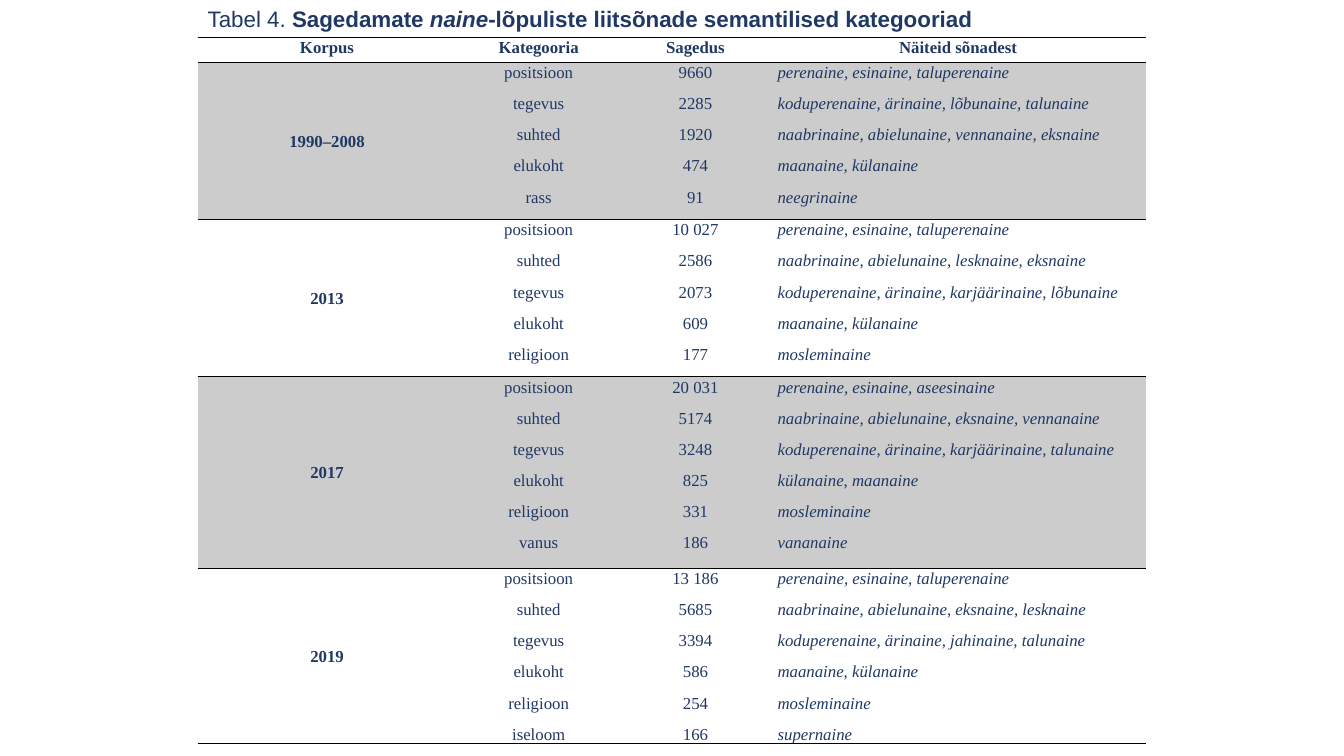
from lxml import etree
from pptx import Presentation
from pptx.dml.color import RGBColor
from pptx.enum.text import MSO_ANCHOR, MSO_AUTO_SIZE, PP_ALIGN
from pptx.oxml.ns import qn
from pptx.util import Pt

TOP, MIDDLE = MSO_ANCHOR.TOP, MSO_ANCHOR.MIDDLE
LEFT, CENTER = PP_ALIGN.LEFT, PP_ALIGN.CENTER
NO_AUTOFIT = MSO_AUTO_SIZE.NONE

NAVY = RGBColor(0x20, 0x38, 0x64)
BLACK = RGBColor(0, 0, 0)
GREY = RGBColor(0xCC, 0xCC, 0xCC)
PLAIN_TABLE_STYLE = "{2D5ABB26-0587-4C30-8999-92F81FD0307C}"

TITLE_SPANS = [
    ("Tabel 4. ", False, False),
    ("Sagedamate ", True, False),
    ("naine", True, True),
    ("-lõpuliste liitsõnade semantilised kategooriad", True, False),
]
HEADINGS = ["Korpus", "Kategooria", "Sagedus", "Näiteid sõnadest"]
COLUMN_WIDTHS = [185, 117.4, 106.6, 268.6]
HEADER_HEIGHT = 18
CORPORA = [
    ("1990–2008", 112.3, [
        ("positsioon", "9660", "perenaine, esinaine, taluperenaine"),
        ("tegevus", "2285", "koduperenaine, ärinaine, lõbunaine, talunaine"),
        ("suhted", "1920", "naabrinaine, abielunaine, vennanaine, eksnaine"),
        ("elukoht", "474", "maanaine, külanaine"),
        ("rass", "91", "neegrinaine"),
    ]),
    ("2013", 112.3, [
        ("positsioon", "10 027", "perenaine, esinaine, taluperenaine"),
        ("suhted", "2586", "naabrinaine, abielunaine, lesknaine, eksnaine"),
        ("tegevus", "2073", "koduperenaine, ärinaine, karjäärinaine, lõbunaine"),
        ("elukoht", "609", "maanaine, külanaine"),
        ("religioon", "177", "mosleminaine"),
    ]),
    ("2017", 136.8, [
        ("positsioon", "20 031", "perenaine, esinaine, aseesinaine"),
        ("suhted", "5174", "naabrinaine, abielunaine, eksnaine, vennanaine"),
        ("tegevus", "3248", "koduperenaine, ärinaine, karjäärinaine, talunaine"),
        ("elukoht", "825", "külanaine, maanaine"),
        ("religioon", "331", "mosleminaine"),
        ("vanus", "186", "vananaine"),
    ]),
    ("2019", 124.6, [
        ("positsioon", "13 186", "perenaine, esinaine, taluperenaine"),
        ("suhted", "5685", "naabrinaine, abielunaine, eksnaine, lesknaine"),
        ("tegevus", "3394", "koduperenaine, ärinaine, jahinaine, talunaine"),
        ("elukoht", "586", "maanaine, külanaine"),
        ("religioon", "254", "mosleminaine"),
        ("iseloom", "166", "supernaine"),
    ]),
]


class TablePage:
    title_font, title_size = "Arial", 16
    table_font, table_size = "Times New Roman", 12
    color = NAVY

    def __init__(self, deck):
        self.slide = deck.slides.add_slide(deck.slide_layouts[5])

    def title(self, spans, left, top, width, height):
        box = self.slide.shapes.title
        box.left, box.top = Pt(left), Pt(top)
        box.width, box.height = Pt(width), Pt(height)
        frame = box.text_frame
        frame.vertical_anchor = TOP
        frame.auto_size = NO_AUTOFIT
        para = frame.paragraphs[0]
        para.alignment = LEFT
        para.font.name, para.font.size = self.title_font, Pt(self.title_size)
        para.font.color.rgb = self.color
        for text, bold, italic in spans:
            span = para.add_run()
            span.text = text
            span.font.bold, span.font.italic = bold, italic

    def table(self, left, top, widths, heights):
        frame = self.slide.shapes.add_table(
            len(heights), len(widths), Pt(left), Pt(top),
            Pt(sum(widths)), Pt(sum(heights)))
        table = frame.table
        table.horz_banding = False
        table.first_row = False
        style = frame._element.find(".//" + qn("a:tableStyleId"))
        style.text = PLAIN_TABLE_STYLE
        for column, width in zip(table.columns, widths):
            column.width = Pt(width)
        for row, height in zip(table.rows, heights):
            row.height = Pt(height)
        return table

    def cell(self, cell, lines, sides, bold=False, italic=False,
             align=CENTER, anchor=TOP, fill=None):
        cell.margin_left = cell.margin_right = Pt(5.4)
        cell.margin_top = cell.margin_bottom = 0
        cell.vertical_anchor = anchor
        cell.text = "\n".join(lines)
        for para in cell.text_frame.paragraphs:
            para.alignment = align
            para.line_spacing, para.space_after = 1.07, Pt(8)
            font = para.font
            font.name, font.size = self.table_font, Pt(self.table_size)
            font.bold, font.italic = bold, italic
            font.color.rgb = self.color
        self.borders(cell, sides)
        if fill is None:
            cell.fill.background()
        else:
            cell.fill.solid()
            cell.fill.fore_color.rgb = fill

    def borders(self, cell, sides):
        """Rule the given sides, T before B as the schema orders them."""
        properties = cell._tc.get_or_add_tcPr()
        for side in sides:
            line = etree.SubElement(properties, qn("a:ln" + side), w=str(Pt(1)))
            paint = etree.SubElement(line, qn("a:solidFill"))
            etree.SubElement(paint, qn("a:srgbClr"), val=str(BLACK))


def main():
    deck = Presentation()
    deck.slide_width, deck.slide_height = Pt(960), Pt(540)
    page = TablePage(deck)
    page.title(TITLE_SPANS, 141.1, 0, 733, 26.6)

    heights = [HEADER_HEIGHT] + [height for _, height, _ in CORPORA]
    table = page.table(141.1, 26.6, COLUMN_WIDTHS, heights)
    for column, heading in enumerate(HEADINGS):
        page.cell(table.cell(0, column), [heading], "TB", bold=True)
    for row, (corpus, _, entries) in enumerate(CORPORA, start=1):
        fill = GREY if row % 2 else None
        categories, counts, examples = zip(*entries)
        page.cell(table.cell(row, 0), [corpus], "TB", bold=True,
                  anchor=MIDDLE, fill=fill)
        page.cell(table.cell(row, 1), categories, "TB", fill=fill)
        page.cell(table.cell(row, 2), counts, "TB", fill=fill)
        page.cell(table.cell(row, 3), examples, "TB", italic=True,
                  align=LEFT, fill=fill)

    deck.save("out.pptx")


if __name__ == "__main__":
    main()
